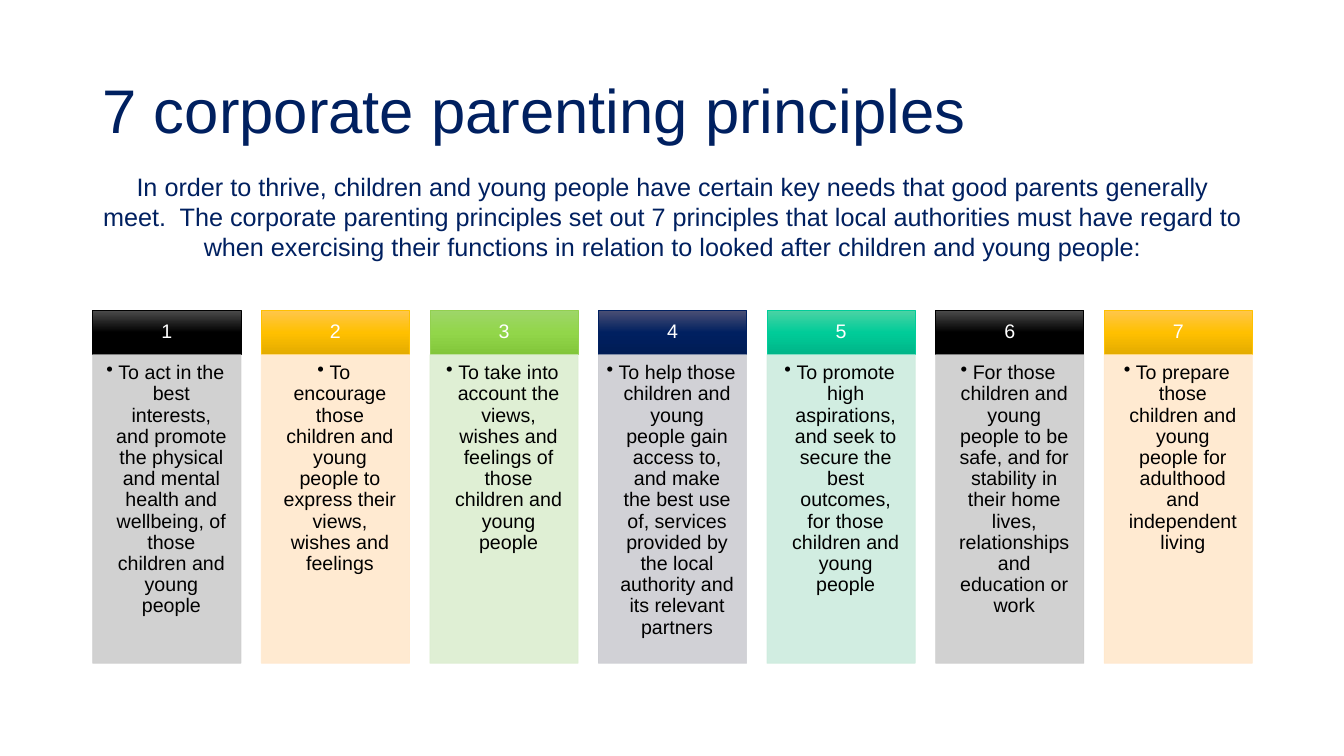
from copy import deepcopy

from pptx import Presentation
from pptx.dml.color import RGBColor
from pptx.enum.shapes import MSO_SHAPE as Preset
from pptx.enum.text import MSO_ANCHOR as Anchor, PP_ALIGN as Align
from pptx.oxml.ns import qn
from pptx.util import Inches, Pt
from lxml import etree

NAVY = "002060"
LEFT, CONTENT_WIDTH = 0.92, 11.5
COLUMN_WIDTH, COLUMN_STEP = 1.47, 1.672
HEADER_TOP, HEADER_HEIGHT, BODY_HEIGHT = 3.08, 0.44, 3.06

BLACK = (("4B4B4B", "000000", "000000"), "000000", "CCCCCC")
AMBER = (("FFC64B", "FFC000", "E3AB00"), "FFC000", "FFE8CC")
GREEN = (("9ED669", "92D64A", "82C63A"), "92D050", "DCEED0")
BLUE = (("4B4F74", "002060", "001C55"), "002060", "CCCDD2")
TEAL = (("4BD3A4", "00CC99", "00B588"), "00CC99", "CCECDE")
THEMES = [BLACK, AMBER, GREEN, BLUE, TEAL]

TITLE = "7 corporate parenting principles"
INTRO = (
    "In order to thrive, children and young people have certain key needs that "
    "good parents generally meet.  The corporate parenting principles set out 7 "
    "principles that local authorities must have regard to when exercising their "
    "functions in relation to looked after children and young people:"
)
PRINCIPLES = [
    "To act in the best interests, and promote the physical and mental health and "
    "wellbeing, of those children and young people",
    "To encourage those children and young people to express their views, wishes "
    "and feelings",
    "To take into account the views, wishes and feelings of those children and "
    "young people",
    "To help those children and young people gain access to, and make the best use "
    "of, services provided by the local authority and its relevant partners",
    "To promote high aspirations, and seek to secure the best outcomes, for those "
    "children and young people",
    "For those children and young people to be safe, and for stability in their "
    "home lives, relationships and education or work",
    "To prepare those children and young people for adulthood and independent living",
]


def rgb(value):
    return RGBColor.from_string(value)


def write(shape, text, size=14, color="000000", align=Align.CENTER,
          anchor=Anchor.TOP, insets=(0.1, 0.05, 0.1, 0.05), spacing=0.9,
          bullet=False):
    frame = shape.text_frame
    frame.word_wrap = True
    frame.vertical_anchor = anchor
    (frame.margin_left, frame.margin_top,
     frame.margin_right, frame.margin_bottom) = map(Inches, insets)
    paragraph = frame.paragraphs[0]
    paragraph.alignment = align
    paragraph.line_spacing = spacing
    run = paragraph.add_run()
    run.text = text
    run.font.name = "Arial"
    run.font.size = Pt(size)
    run.font.color.rgb = rgb(color)
    if bullet:
        properties = paragraph._p.get_or_add_pPr()
        properties.set("marL", str(Inches(0.12)))
        properties.set("indent", str(Inches(-0.12)))
        etree.SubElement(properties, qn("a:buChar")).set("char", "•")


def add_text(slide, text, top, height, **text_format):
    box = slide.shapes.add_textbox(
        Inches(LEFT), Inches(top), Inches(CONTENT_WIDTH), Inches(height))
    write(box, text, **text_format)


def add_panel(slide, left, top, height, line_color):
    panel = slide.shapes.add_shape(
        Preset.RECTANGLE, Inches(left), Inches(top),
        Inches(COLUMN_WIDTH), Inches(height))
    panel.shadow.inherit = False
    panel.line.color.rgb = rgb(line_color)
    panel.line.width = Pt(0.5)
    return panel


def shade(panel, colors):
    panel.fill.gradient()
    panel.fill.gradient_angle = 270
    stops = panel._element.spPr.find(qn("a:gradFill")).find(qn("a:gsLst"))
    stops.append(deepcopy(stops[-1]))
    for stop, color, position in zip(panel.fill.gradient_stops, colors, (0, 0.5, 1)):
        stop.color.rgb = rgb(color)
        stop.position = position


def tint(panel, color):
    panel.fill.solid()
    panel.fill.fore_color.rgb = rgb(color)
    for swatch in panel._element.spPr.iter(qn("a:srgbClr")):
        etree.SubElement(swatch, qn("a:alpha")).set("val", "90000")


def add_principle(slide, index, principle):
    gradient, edge, pale = THEMES[index % len(THEMES)]
    left = LEFT + index * COLUMN_STEP
    header = add_panel(slide, left, HEADER_TOP, HEADER_HEIGHT, edge)
    shade(header, gradient)
    write(header, str(index + 1), color="FFFFFF", anchor=Anchor.MIDDLE,
          insets=(0.11, 0.06, 0.11, 0.06))
    body = add_panel(slide, left, HEADER_TOP + HEADER_HEIGHT, BODY_HEIGHT, pale)
    tint(body, pale)
    write(body, principle, insets=(0.08, 0.08, 0.11, 0.12), bullet=True)


def main():
    deck = Presentation()
    deck.slide_width, deck.slide_height = Inches(13.33), Inches(7.5)
    slide = deck.slides.add_slide(deck.slide_layouts[6])
    add_text(slide, TITLE, 0.4, 1.45, size=44, color=NAVY, align=Align.LEFT,
             anchor=Anchor.MIDDLE)
    for index, principle in enumerate(PRINCIPLES):
        add_principle(slide, index, principle)
    add_text(slide, INTRO, 1.65, 1.01, size=18, color=NAVY, spacing=1.0)
    deck.save("out.pptx")


if __name__ == "__main__":
    main()
